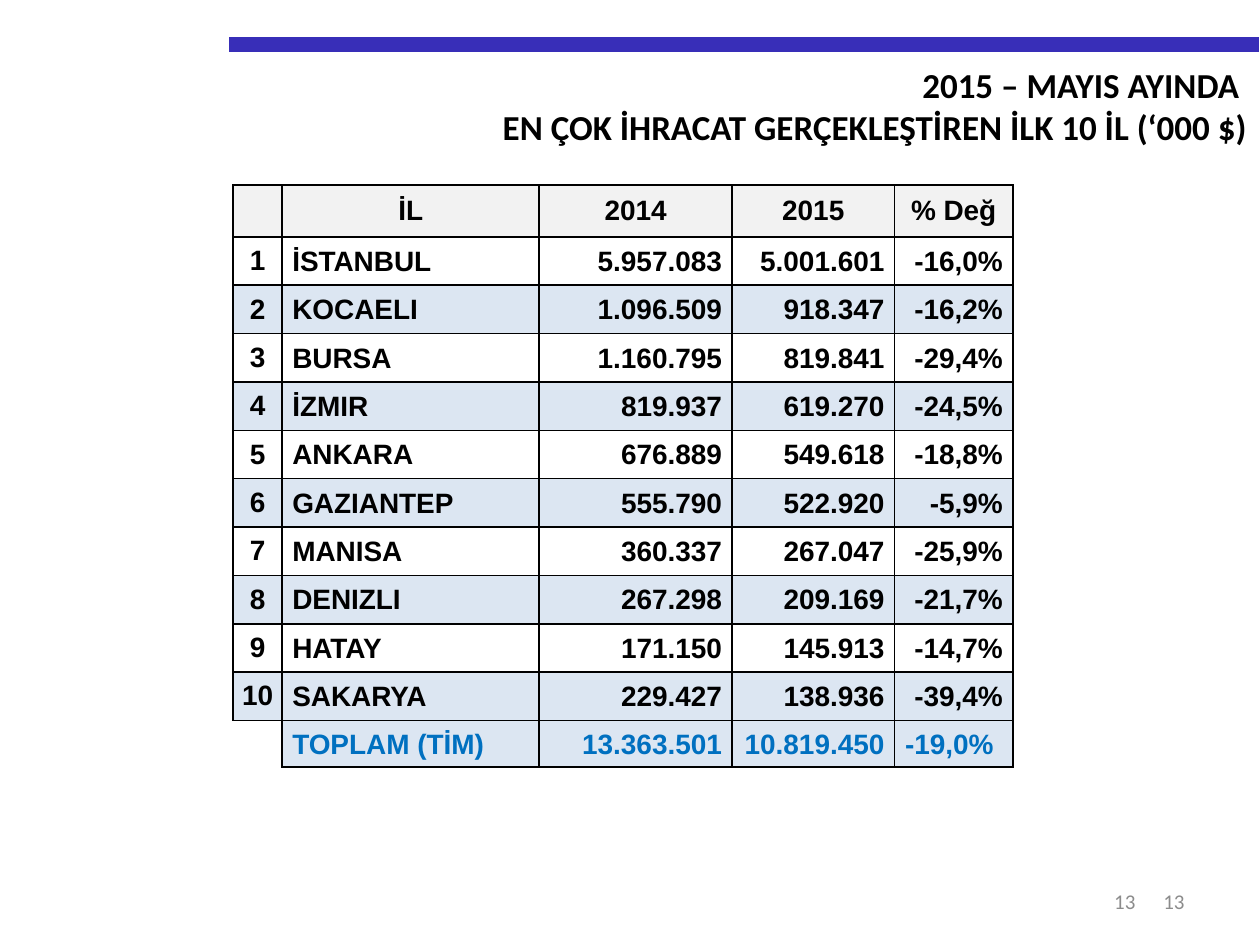
from lxml.etree import SubElement
from pptx import Presentation
from pptx.dml.color import RGBColor
from pptx.enum.shapes import MSO_CONNECTOR
from pptx.enum.text import MSO_ANCHOR, MSO_AUTO_SIZE, PP_ALIGN
from pptx.oxml.ns import qn
from pptx.util import Inches, Pt

LEFT, MID, RIGHT = PP_ALIGN.LEFT, PP_ALIGN.CENTER, PP_ALIGN.RIGHT
BLACK, GREY, BLUE, BAR = "000000", "8C8C8C", "0070C0", "382EB8"
HEAD, BAND = "F2F2F2", "DCE6F2"

HEADS = ["", "İL", "2014", "2015", "% Değ"]
CITIES = [
    ("İSTANBUL", "5.957.083", "5.001.601", "-16,0%"),
    ("KOCAELI", "1.096.509", "918.347", "-16,2%"),
    ("BURSA", "1.160.795", "819.841", "-29,4%"),
    ("İZMIR", "819.937", "619.270", "-24,5%"),
    ("ANKARA", "676.889", "549.618", "-18,8%"),
    ("GAZIANTEP", "555.790", "522.920", "-5,9%"),
    ("MANISA", "360.337", "267.047", "-25,9%"),
    ("DENIZLI", "267.298", "209.169", "-21,7%"),
    ("HATAY", "171.150", "145.913", "-14,7%"),
    ("SAKARYA", "229.427", "138.936", "-39,4%"),
]
TOTAL = ["", "TOPLAM (TİM)", "13.363.501", "10.819.450", "-19,0%"]


def unit(n):
    """Length of n grid steps; the slide is 100 columns by 75 rows."""
    return Inches(n / 10)


def paint(hue):
    return RGBColor.from_string(hue)


class Page:
    def __init__(self, deck):
        self.slide = deck.slides.add_slide(deck.slide_layouts[5])

    def words(self, frame, text, size, align, hue=BLACK, font="Calibri", bold=True):
        frame.text = text
        for para in frame.paragraphs:
            para.alignment = align
            for run in para.runs:
                run.font.name, run.font.size = font, Pt(size)
                run.font.bold = bold
                run.font.color.rgb = paint(hue)

    def title(self, text, x, y, w, h):
        box = self.slide.shapes.title
        box.left, box.top, box.width, box.height = map(unit, (x, y, w, h))
        frame = box.text_frame
        frame.vertical_anchor = MSO_ANCHOR.TOP
        frame.auto_size = MSO_AUTO_SIZE.SHAPE_TO_FIT_TEXT
        self.words(frame, text, 20, RIGHT)

    def label(self, text, x, y, w, h):
        box = self.slide.shapes.add_textbox(*map(unit, (x, y, w, h)))
        frame = box.text_frame
        frame.word_wrap = True
        frame.vertical_anchor = MSO_ANCHOR.MIDDLE
        self.words(frame, text, 12, RIGHT, GREY, bold=False)

    def rule(self, x, y, end, width):
        line = self.slide.shapes.add_connector(
            MSO_CONNECTOR.STRAIGHT, *map(unit, (x, y, end, y)))
        line.line.color.rgb = paint(BAR)
        line.line.width = Pt(width)
        SubElement(line._element.spPr, qn("a:effectLst"))

    def border(self, cell, sides):
        props = cell._tc.get_or_add_tcPr()
        for side in "LRTB":
            edge = SubElement(props, qn("a:ln" + side), w=str(Pt(1)))
            if side in sides:
                fill = SubElement(edge, qn("a:solidFill"))
                SubElement(fill, qn("a:srgbClr"), val=BLACK)
            else:
                SubElement(edge, qn("a:noFill"))

    def cell(self, cell, text, align, inset, fill, hue, sides="LRTB"):
        self.border(cell, sides)
        if fill:
            cell.fill.solid()
            cell.fill.fore_color.rgb = paint(fill)
        else:
            cell.fill.background()
        cell.vertical_anchor = MSO_ANCHOR.MIDDLE
        (cell.margin_left, cell.margin_top,
         cell.margin_right, cell.margin_bottom) = map(unit, inset)
        self.words(cell.text_frame, text, 16, align, hue, "Arial")

    def table(self, rows, x, y, widths, heights):
        grid = self.slide.shapes.add_table(
            len(rows), len(widths),
            *map(unit, (x, y, sum(widths), sum(heights)))).table
        grid.first_row = grid.horz_banding = False
        for col, width in zip(grid.columns, widths):
            col.width = unit(width)
        for row, height in zip(grid.rows, heights):
            row.height = unit(height)
        last = len(rows) - 1
        for r, row in enumerate(rows):
            for c, text in enumerate(row):
                fill = BAND if r % 2 == 0 or r == last else None
                hue = BLUE if r == last else BLACK
                align, inset, sides = RIGHT, (0.1, 0.1, 0.8, 0), "LRTB"
                if c == 0:
                    align, inset = MID, (0, 0, 0, 0)
                elif c == 1:
                    align, inset = LEFT, (0.8, 0.1, 0.1, 0)
                if r == 0:
                    align, inset, fill = MID, (1, 0.5, 1, 0.5), HEAD
                elif r == last and c == 0:
                    fill, sides = None, "TR"
                elif r == last and c == len(row) - 1:
                    align = MID
                self.cell(grid.cell(r, c), text, align, inset, fill, hue, sides)


def main():
    deck = Presentation()
    deck.slide_width, deck.slide_height = unit(100), unit(75)
    page = Page(deck)
    page.rule(18.2, 3.5, 99.9, 8.5)
    for x, w in ((71.7, 23.3), (70.1, 21)):
        page.label("13", x, 69.5, w, 4)
    page.title("2015 – MAYIS AYINDA \n"
               "EN ÇOK İHRACAT GERÇEKLEŞTİREN İLK 10 İL (‘000 $)",
               10.6, 4.5, 89.4, 7.7)
    ranked = [[str(n), *city] for n, city in enumerate(CITIES, 1)]
    page.table([HEADS, *ranked, TOTAL], 18.5, 14.7,
               [3.9, 20.4, 15.3, 12.9, 9.4],
               [4.1] + [3.84] * len(ranked) + [3.7])
    deck.save("out.pptx")


if __name__ == "__main__":
    main()
